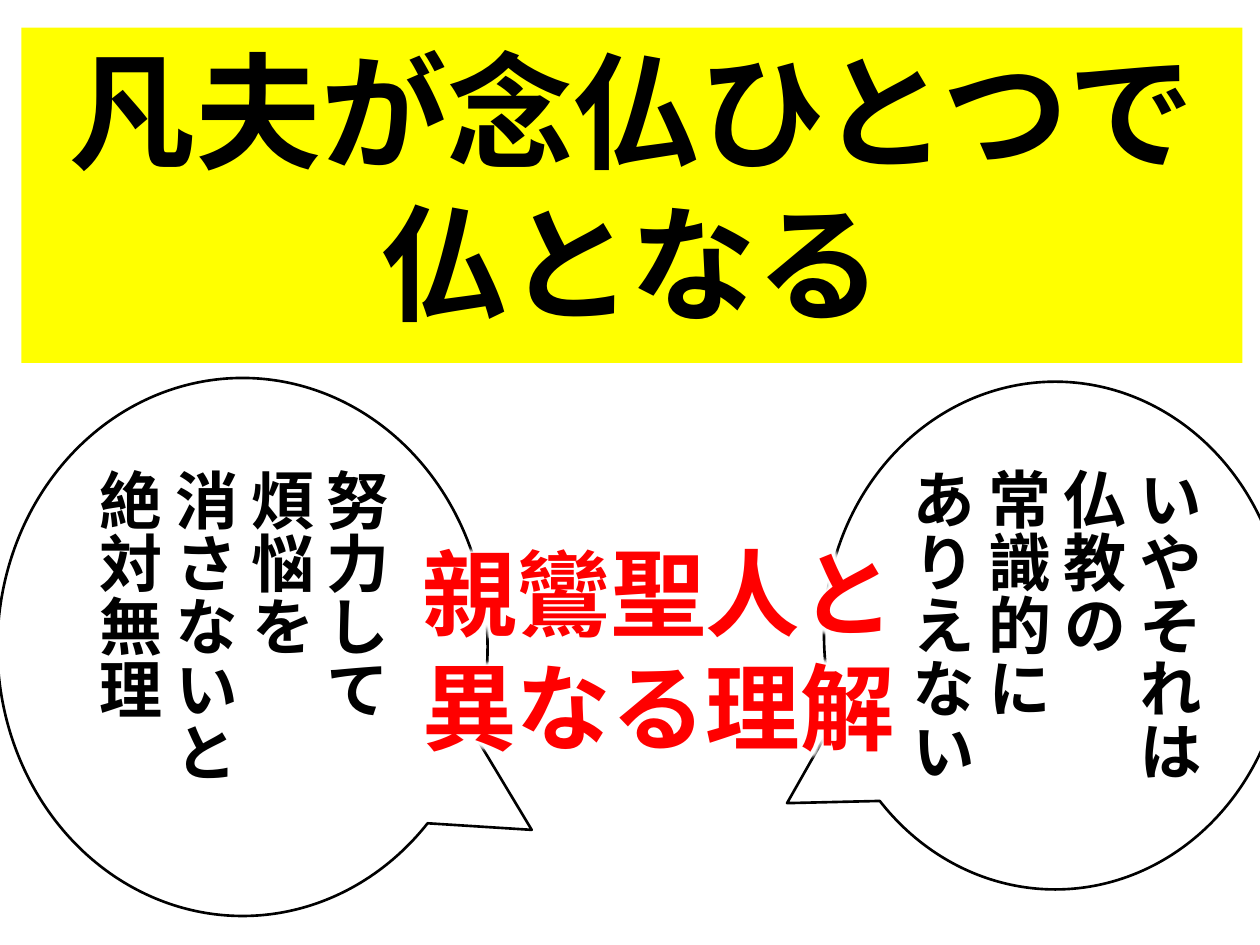
from lxml import etree
from pptx import Presentation
from pptx.dml.color import RGBColor
from pptx.enum import shapes, text
from pptx.oxml.ns import qn
from pptx.util import Inches, Pt

FONT = "Noto Sans CJK JP"
BLACK, WHITE, YELLOW, RED = "000000", "FFFFFF", "FFFF00", "FF0000"


def color(hex_string):
    return RGBColor.from_string(hex_string)


def add_glow(run, hex_string, radius):
    """Put a soft halo around the letters, right after their fill."""
    effects = etree.Element(qn("a:effectLst"))
    glow = etree.SubElement(effects, qn("a:glow"), rad=str(Pt(radius)))
    etree.SubElement(glow, qn("a:srgbClr"), val=hex_string)
    run.font._element.find(qn("a:solidFill")).addnext(effects)


def write_text(shape, lines, size, ink=BLACK, align=text.PP_ALIGN.CENTER,
               anchor=text.MSO_ANCHOR.TOP, vertical=False, glow=None):
    frame = shape.text_frame
    frame.word_wrap = True
    frame.vertical_anchor = anchor
    if vertical:
        frame._txBody.bodyPr.set("vert", "eaVert")
    for index, line in enumerate(lines):
        paragraph = frame.paragraphs[0] if index == 0 else frame.add_paragraph()
        paragraph.alignment = align
        run = paragraph.add_run()
        run.text = line
        run.font.size = Pt(size)
        run.font.bold = True
        run.font.color.rgb = color(ink)
        run.font.name = FONT
        latin = run.font._element.find(qn("a:latin"))
        east_asian = etree.Element(qn("a:ea"), typeface=FONT)
        latin.addnext(east_asian)
        if glow:
            add_glow(run, glow, 8)


def add_box(slide, kind, box, fill, line=None):
    shape = slide.shapes.add_shape(kind, *map(Inches, box))
    shape.shadow.inherit = False
    shape.fill.solid()
    shape.fill.fore_color.rgb = color(fill)
    if line:
        shape.line.color.rgb = color(line)
        shape.line.width = Pt(1.5)
    else:
        shape.line.fill.background()
    return shape


def add_speech_bubble(slide, box, tail, lines):
    bubble = add_box(slide, shapes.MSO_SHAPE.OVAL_CALLOUT, box, WHITE, BLACK)
    bubble.adjustments[0], bubble.adjustments[1] = tail
    write_text(bubble, lines, 36, align=text.PP_ALIGN.LEFT,
               anchor=text.MSO_ANCHOR.MIDDLE, vertical=True)


def main():
    presentation = Presentation()
    presentation.slide_width, presentation.slide_height = Inches(10), Inches(7.5)
    slide = presentation.slides.add_slide(presentation.slide_layouts[6])

    # Title band
    title = add_box(slide, shapes.MSO_SHAPE.RECTANGLE, (0.17, 0.22, 9.69, 2.66), YELLOW)
    write_text(title, ["凡夫が念仏ひとつで", "仏となる"], 72)

    # Opposing voices, right then left
    add_speech_bubble(slide, (6.54, 3.03, 3.67, 4.03), (-0.58, 0.33),
                      ["いやそれは", "仏教の", "常識的に", "ありえない"])
    add_speech_bubble(slide, (-0.02, 3, 3.89, 4.27), (0.59, 0.34),
                      ["努力して", "煩悩を", "消さないと", "絶対無理"])

    # Conclusion between the bubbles
    conclusion = slide.shapes.add_textbox(*map(Inches, (3.14, 4.2, 4.17, 2.06)))
    write_text(conclusion, ["親鸞聖人と", "異なる理解"], 54, ink=RED, glow=WHITE)

    presentation.save("out.pptx")


if __name__ == "__main__":
    main()
